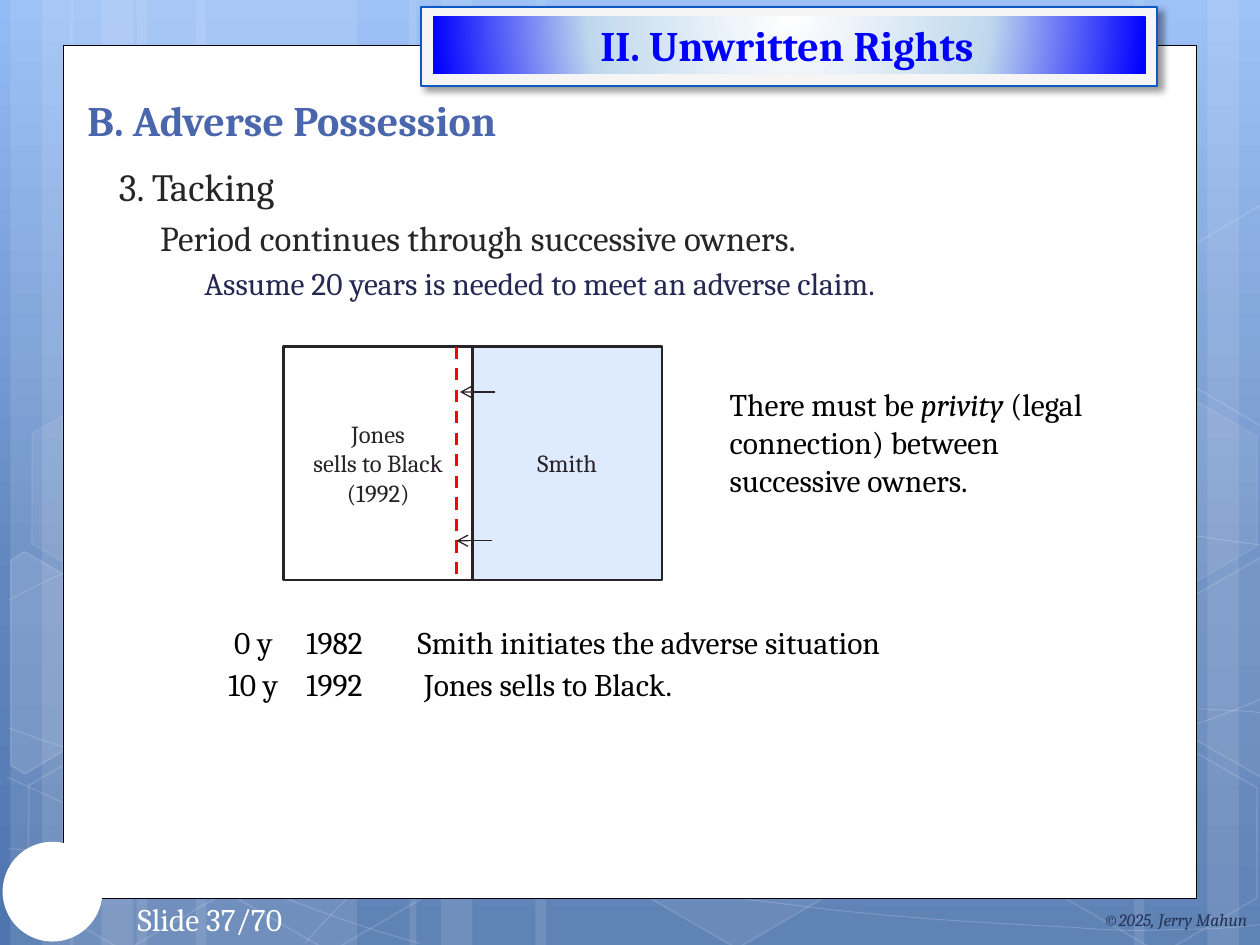
"""Build the slide on tacking in adverse possession."""
import math
from dataclasses import dataclass

from lxml import etree
from pptx import Presentation
from pptx import util as u
from pptx.dml.color import RGBColor
from pptx.enum import dml, shapes, text
from pptx.oxml.ns import qn


@dataclass(frozen=True)
class Theme:
    """Hold the font, colours and type sizes."""
    font: str = "Cambria"
    white: str = "FFFFFF"
    black: str = "000000"
    ink: str = "282329"
    body: str = "262626"
    navy: str = "242852"
    title: str = "4A66AC"
    banner: str = "0000FF"
    banner_fill: str = "F5F5F5"
    banner_edge: str = "0E58C4"
    parcel: str = "DEEAFD"
    fence: str = "FF0000"
    footer: str = "253356"
    sky: tuple = ((0, "93BBF6"), (62, "6186BE"), (100, "4F75AE"))
    glow: tuple = ((0, "FFFFFF"), (56, "C0D8ED"), (100, "0000FF"))
    head: int = 24
    topic: int = 22
    point: int = 20
    text: int = 18
    label: int = 14
    small: int = 10


T = Theme()
STRIPES = [(78, 126), (6, 36), (24, 60), (112, 126), (40, 36), (58, 60),
           (528, 126), (690, 36), (648, 60), (306, 222), (234, 36), (252, 60)]
CURVES = [
    [(5, 485), (44, 487), (83, 489), (137, 488), (191, 487), (258, 486), (330, 479),
     (402, 472), (504, 458), (570, 444), (636, 431), (703, 409), (725, 397)],
    [(5, 343), (26, 332), (47, 321), (87, 310), (128, 300), (186, 284), (250, 279),
     (314, 274), (392, 273), (471, 279), (550, 284), (682, 307), (725, 312)],
    [(4, 444), (91, 484), (178, 523), (240, 539)],
    [(5, 416), (27, 424), (50, 432), (92, 444), (134, 454), (197, 472), (257, 485),
     (317, 497), (392, 510), (452, 517), (512, 525), (576, 528), (614, 530),
     (652, 533), (662, 531), (680, 531), (699, 531), (712, 529), (725, 528)],
    [(174, 539), (187, 525), (200, 510), (217, 498), (235, 485), (259, 471), (279, 460),
     (300, 450), (312, 446), (338, 438), (364, 431), (413, 421), (438, 416),
     (464, 411), (467, 411), (490, 410), (512, 408), (547, 405), (572, 405),
     (597, 405), (638, 405), (638, 405), (638, 405), (686, 405), (686, 405),
     (699, 406), (711, 406), (718, 407), (724, 408), (722, 407), (724, 408)],
]
HEXAGONS = [(240.5, 26, 4, 8), (358, 424, 6, 12), (8, 425.5, 0, 12),
            (10, 224.5, 7, 8), (125.5, 426, 0, 12), (542, 326, 10, 12),
            (600.5, 427, 0, 12), (600.5, 226, 7, 8)]
CUT_HEXAGONS = [
    ([(6, 320), (14, 315), (69, 347), (68, 410), (14, 442), (6, 437)], (26, 385), 10),
    ([(667, 349), (721, 318), (726, 321), (726, 441), (721, 444), (667, 413)],
     (709, 374.5), 4),
    ([(667, 149), (721, 117), (727, 121), (727, 241), (721, 244), (667, 212)],
     (709, 173.5), 0),
]


def sub(parent, tag, **attrs):
    """Append a child element with attributes."""
    return etree.SubElement(parent, qn(tag), {k: str(v) for k, v in attrs.items()})


def paint(sp, fill=None, line=None, width=0.5, fill_alpha=100, line_alpha=100):
    """Set the fill and outline of a shape, with opacity in percent."""
    sp.shadow.inherit = False
    for part, color, alpha, tag in ((sp.fill, fill, fill_alpha, "a:solidFill"),
                                    (sp.line.fill, line, line_alpha, "a:ln/a:solidFill")):
        if not color:
            part.background()
            continue
        part.solid()
        part.fore_color.rgb = RGBColor.from_string(color)
        if alpha < 100:
            xpath = "/".join(qn(t) for t in f"{tag}/a:srgbClr".split("/"))
            sub(sp._element.spPr.find(xpath), "a:alpha", val=alpha * 1000)
    if line:
        sp.line.width = u.Pt(width)
    return sp


def gradient(fill, el, stops, angle=None):
    """Give a linear gradient, or a radial one when no angle is set."""
    fill.gradient()
    grad = el.find(".//" + qn("a:gradFill"))
    for child in list(grad):
        grad.remove(child)
    gs_list = sub(grad, "a:gsLst")
    for pos, color in stops:
        sub(sub(gs_list, "a:gs", pos=pos * 1000), "a:srgbClr", val=color)
    if angle is None:
        radial = sub(grad, "a:path", path="circle")
        sub(radial, "a:fillToRect", l=50000, t=-80000, r=50000, b=180000)
    else:
        sub(grad, "a:lin", ang=angle * 60000, scaled=0)


def box(s, x, y, w, h, kind="RECTANGLE", **look):
    """Add a preset shape."""
    sp = s.shapes.add_shape(shapes.MSO_SHAPE[kind], u.Pt(x), u.Pt(y), u.Pt(w), u.Pt(h))
    return paint(sp, **look)


def outline(s, points, close, **look):
    """Add a freeform through the given points."""
    pts = [(u.Pt(x), u.Pt(y)) for x, y in points]
    builder = s.shapes.build_freeform(*pts[0], scale=1.0)
    builder.add_line_segments(pts[1:], close=close)
    return paint(builder.convert_to_shape(), **look)


def curve(s, points, **look):
    """Add a chain of cubic curves, three points to each."""
    sp = outline(s, points, False, **look)
    segments = list(sp._element.iter(qn("a:lnTo")))
    track = segments[0].getparent()
    for i in range(0, len(segments), 3):
        cubic = sub(track, "a:cubicBezTo")
        for segment in segments[i:i + 3]:
            cubic.append(segment[0])
            track.remove(segment)


def turn(points, center, degrees):
    """Rotate points about a center."""
    cx, cy = center
    cos, sin = math.cos(math.radians(degrees)), math.sin(math.radians(degrees))
    return [(cx + (x - cx) * cos - (y - cy) * sin, cy + (x - cx) * sin + (y - cy) * cos)
            for x, y in points]


def line(s, x1, y1, x2, y2, color=T.ink, width=0.75, dash=False, arrow=False):
    """Add a straight line, dashed or with an arrowhead at its end."""
    c = s.shapes.add_connector(shapes.MSO_CONNECTOR.STRAIGHT, *map(u.Pt, (x1, y1, x2, y2)))
    c.line.color.rgb = RGBColor.from_string(color)
    c.line.width = u.Pt(width)
    if dash:
        c.line.dash_style = dml.MSO_LINE.DASH
    if arrow:
        sub(c.line._get_or_add_ln(), "a:tailEnd", type="arrow")
    sub(c._element.spPr, "a:effectLst")


def write(p, content, size=T.text, color=T.black, bold=False, italic=False,
          align="LEFT", before=0, indent=0, level=0):
    """Append a formatted run to a paragraph."""
    p.alignment = text.PP_ALIGN[align]
    p.level = level
    p.space_before = u.Pt(before)
    pr = p._p.get_or_add_pPr()
    pr.set("marL", str(u.Pt(indent)))
    pr.set("indent", "0")
    r = p.add_run()
    r.text = content
    r.font.name, r.font.size = T.font, u.Pt(size)
    r.font.bold, r.font.italic = bold, italic
    r.font.color.rgb = RGBColor.from_string(color)


def text_box(s, x, y, w, h, content="", anchor="TOP", wrap=True, **fmt):
    """Add a text box and return its frame."""
    tf = s.shapes.add_textbox(*map(u.Pt, (x, y, w, h))).text_frame
    tf.word_wrap = wrap
    tf.vertical_anchor = text.MSO_ANCHOR[anchor]
    if content:
        write(tf.paragraphs[0], content, **fmt)
    return tf


def write_lines(tf, lines):
    """Write one paragraph for each pair of text and format."""
    for i, (content, fmt) in enumerate(lines):
        write(tf.add_paragraph() if i else tf.paragraphs[0], content, **fmt)


def backdrop(s):
    """Draw the sky, stripes, curves and hexagons."""
    gradient(s.background.fill, s._element, T.sky, 90)
    for x, w in STRIPES:
        box(s, x, 0, w, 540, fill=T.white, fill_alpha=10)
    for points in CURVES:
        curve(s, points, line=T.white, line_alpha=20)
    for x, y, fill_alpha, line_alpha in HEXAGONS:
        sp = box(s, x, y, 126, 109.5, "HEXAGON", fill=T.white if fill_alpha else None,
                 line=T.white, width=1, fill_alpha=fill_alpha, line_alpha=line_alpha)
        sp.adjustments[0] = 0.285
        sp.rotation = 30
    for points, center, fill_alpha in CUT_HEXAGONS:
        sp = outline(s, turn(points, center, -30), True, fill=T.white if fill_alpha else None,
                     line=T.white, width=1, fill_alpha=fill_alpha, line_alpha=12)
        sp.rotation = 30


def frame(s):
    """Draw the page, banner and footer."""
    box(s, 36, 26, 648, 487.2, fill=T.white, line=T.black)
    sp = box(s, 240.7, 4.2, 420.7, 44.8, fill=T.banner_fill, line=T.banner_edge, width=1.25)
    shadow = sub(sp._element.spPr.find(qn("a:effectLst")), "a:outerShdw", blurRad=u.Pt(4),
                 dist=u.Pt(3), dir=45 * 60000, algn="tl", rotWithShape=0)
    sub(sub(shadow, "a:srgbClr", val=T.black), "a:alpha", val=40000)
    sp = box(s, 247.3, 9.5, 407.5, 32.6)
    gradient(sp.fill, sp._element, T.glow)
    box(s, 1.5, 481, 57, 57, "OVAL", fill=T.white)
    text_box(s, 51.7, 510.5, 132.5, 29, " Slide 37/70", color=T.white, align="CENTER")
    text_box(s, 316.8, 7.5, 265.7, 36, "II. Unwritten Rights", wrap=False, size=T.head,
             color=T.banner, bold=True, align="CENTER")
    text_box(s, 588, 511, 131.8, 29, "©2025, Jerry Mahun", anchor="MIDDLE", size=T.small,
             color=T.footer, italic=True, align="RIGHT")


def parcels(s):
    """Draw the two lots, the fence and the encroachment arrows."""
    for x, fill, names in ((162, T.white, ("Jones", "sells to Black", "(1992)")),
                           (270, T.parcel, ("Smith",))):
        tf = box(s, x, 198, 108.2, 133.4, fill=fill, line=T.ink, width=1.25).text_frame
        tf.vertical_anchor = text.MSO_ANCHOR.MIDDLE
        fmt = dict(size=T.label, color=T.ink, align="CENTER")
        write_lines(tf, [(name, fmt) for name in names])
    line(s, 261, 198, 261, 331.4, color=T.fence, width=1.75, dash=True)
    line(s, 283, 224, 262.8, 224, arrow=True)
    line(s, 281.3, 309, 260.8, 309, arrow=True)


def timeline(s):
    """Add the table of years and events."""
    events = [("0 y", "1982", "Smith initiates the adverse situation"),
              ("10 y", "1992", " Jones sells to Black."), ("",) * 3, ("",) * 3]
    table = s.shapes.add_table(4, 3, *map(u.Pt, (114.5, 358, 552, 96))).table
    table.first_row = table.horz_banding = False
    for col, width in zip(table.columns, (60.5, 63.5, 428)):
        col.width = u.Pt(width)
    for i, event in enumerate(events):
        for j, content in enumerate(event):
            cell = table.cell(i, j)
            cell.fill.background()
            cell.margin_left = cell.margin_right = cell.margin_top = cell.margin_bottom = 0
            if content:
                write(cell.text_frame.paragraphs[0], content, align="LEFT" if j else "CENTER")


def main():
    """Build and save the slide."""
    prs = Presentation()
    prs.slide_width, prs.slide_height = u.Pt(720), u.Pt(540)
    s = prs.slides.add_slide(prs.slide_layouts[6])
    backdrop(s)
    frame(s)
    text_box(s, 42.9, 52.5, 553, 34, "B. Adverse Possession", anchor="BOTTOM",
             size=T.head, color=T.title, bold=True)
    write_lines(text_box(s, 55.7, 89.5, 609, 383), [
        ("3. Tacking", dict(size=T.topic, color=T.body, indent=5.2)),
        ("Period continues through successive owners.",
         dict(size=T.point, color=T.body, indent=28.8, before=4, level=1)),
        ("Assume 20 years is needed to meet an adverse claim.",
         dict(color=T.navy, indent=54, before=3.6, level=2))])
    parcels(s)
    timeline(s)
    p = text_box(s, 409.9, 216.7, 234.7, 72.7).paragraphs[0]
    write(p, "There must be ")
    write(p, "privity", italic=True)
    write(p, " (legal connection) between successive owners.")
    prs.save("out.pptx")


if __name__ == "__main__":
    main()
